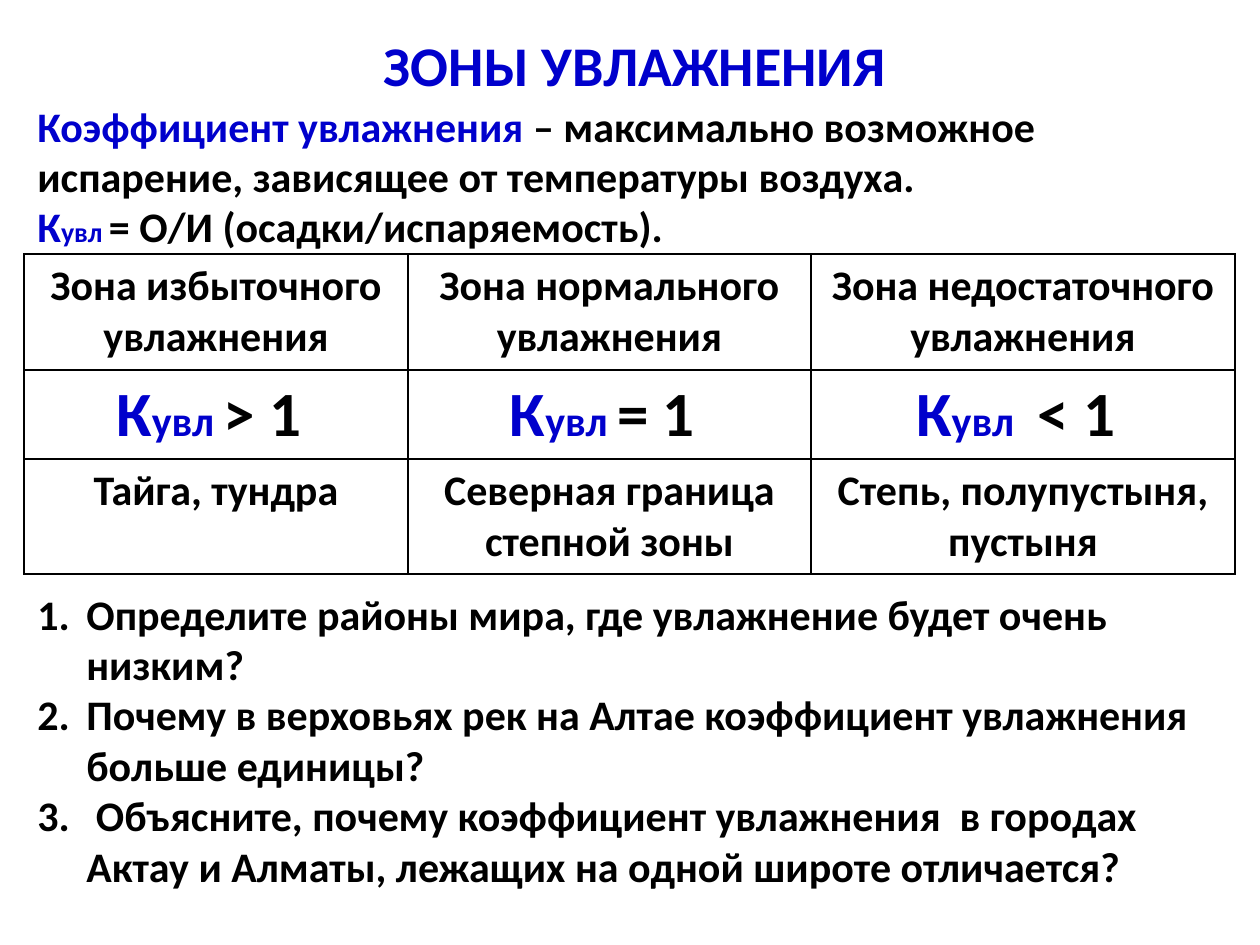
from lxml.etree import SubElement
from pptx import Presentation
from pptx.dml.color import RGBColor
from pptx.enum.text import MSO_ANCHOR, PP_ALIGN
from pptx.oxml.ns import qn
from pptx.util import Emu, Pt

PX = 914400 // 126
BLUE, BLACK = "0000CC", "000000"


def px(n):
    return Emu(n * PX)


def color(hex_text):
    return RGBColor.from_string(hex_text)


def write(p, runs, align=PP_ALIGN.LEFT):
    """Fill a paragraph with (text, size, colour) runs in bold Calibri."""
    p.alignment = align
    for text, size, hex_text in runs:
        r = p.add_run()
        r.text = text
        r.font.name, r.font.bold, r.font.size = "Calibri", True, Pt(size)
        r.font.color.rgb = color(hex_text)


def coefficient(size, index_size, rest):
    return [("К", size, BLUE), ("увл ", index_size, BLUE), (rest, size, BLACK)]


def add_text(slide, box, paragraphs, align=PP_ALIGN.LEFT, anchor=MSO_ANCHOR.TOP):
    tf = slide.shapes.add_textbox(*map(px, box)).text_frame
    tf.word_wrap = True
    tf.vertical_anchor = anchor
    for i, runs in enumerate(paragraphs):
        p = tf.add_paragraph() if i else tf.paragraphs[0]
        write(p, runs, align)
    return tf


def add_title(slide, box):
    add_text(slide, box, [[("ЗОНЫ УВЛАЖНЕНИЯ", 32, BLUE)]],
             PP_ALIGN.CENTER, MSO_ANCHOR.MIDDLE)


def add_definition(slide, box):
    add_text(slide, box, [
        [("Коэффициент увлажнения ", 24, BLUE),
         ("– максимально возможное испарение, зависящее от температуры воздуха.", 24, BLACK)],
        coefficient(24, 16, "= О/И (осадки/испаряемость)."),
    ])


def style_cell(cell):
    """Clear the fill and draw a thin black border on each side."""
    tc_pr = cell._tc.get_or_add_tcPr()
    for side in ("a:lnL", "a:lnR", "a:lnT", "a:lnB"):
        ln = SubElement(tc_pr, qn(side), w=str(Pt(1)))
        fill = SubElement(ln, qn("a:solidFill"))
        SubElement(fill, qn("a:srgbClr"), val=BLACK)
    cell.fill.background()


def add_zones(slide, box, col_widths, row_heights):
    zones = [
        ("Зона избыточного увлажнения", "> 1 ", "Тайга, тундра"),
        ("Зона нормального увлажнения", "= 1 ", "Северная граница степной зоны"),
        ("Зона недостаточного увлажнения", " < 1 ", "Степь, полупустыня, пустыня"),
    ]
    table = slide.shapes.add_table(3, len(zones), *map(px, box)).table
    table.first_row = table.horz_banding = False
    for row, height in zip(table.rows, row_heights):
        row.height = px(height)
    for c, (name, relation, places) in enumerate(zones):
        table.columns[c].width = px(col_widths[c])
        contents = [[(name, 24, BLACK)], coefficient(36, 24, relation), [(places, 24, BLACK)]]
        for r, runs in enumerate(contents):
            cell = table.cell(r, c)
            write(cell.text_frame.paragraphs[0], runs, PP_ALIGN.CENTER)
            style_cell(cell)


def add_questions(slide, box):
    questions = [
        "Определите районы мира, где увлажнение будет очень низким?",
        "Почему в верховьях рек на Алтае коэффициент увлажнения больше единицы?",
        " Объясните, почему коэффициент увлажнения  в городах Актау и Алматы, "
        "лежащих на одной широте отличается?",
    ]
    tf = add_text(slide, box, [[(q, 24, BLACK)] for q in questions])
    for p in tf.paragraphs:
        p_pr = p._p.get_or_add_pPr()
        p_pr.set("marL", str(px(49)))
        p_pr.set("indent", str(-px(49)))
        SubElement(p_pr, qn("a:buFont"), typeface="+mj-lt")
        SubElement(p_pr, qn("a:buAutoNum"), type="arabicPeriod")


def main():
    prs = Presentation()
    prs.slide_width, prs.slide_height = px(1260), px(945)
    slide = prs.slides.add_slide(prs.slide_layouts[6])
    add_title(slide, (68, 16, 1134, 97))
    add_definition(slide, (25, 94, 1211, 720))
    add_zones(slide, (24, 254, 1211, 320), (384, 403, 424), (116, 89, 115))
    add_questions(slide, (25, 582, 1211, 317))
    prs.save("out.pptx")


if __name__ == "__main__":
    main()
